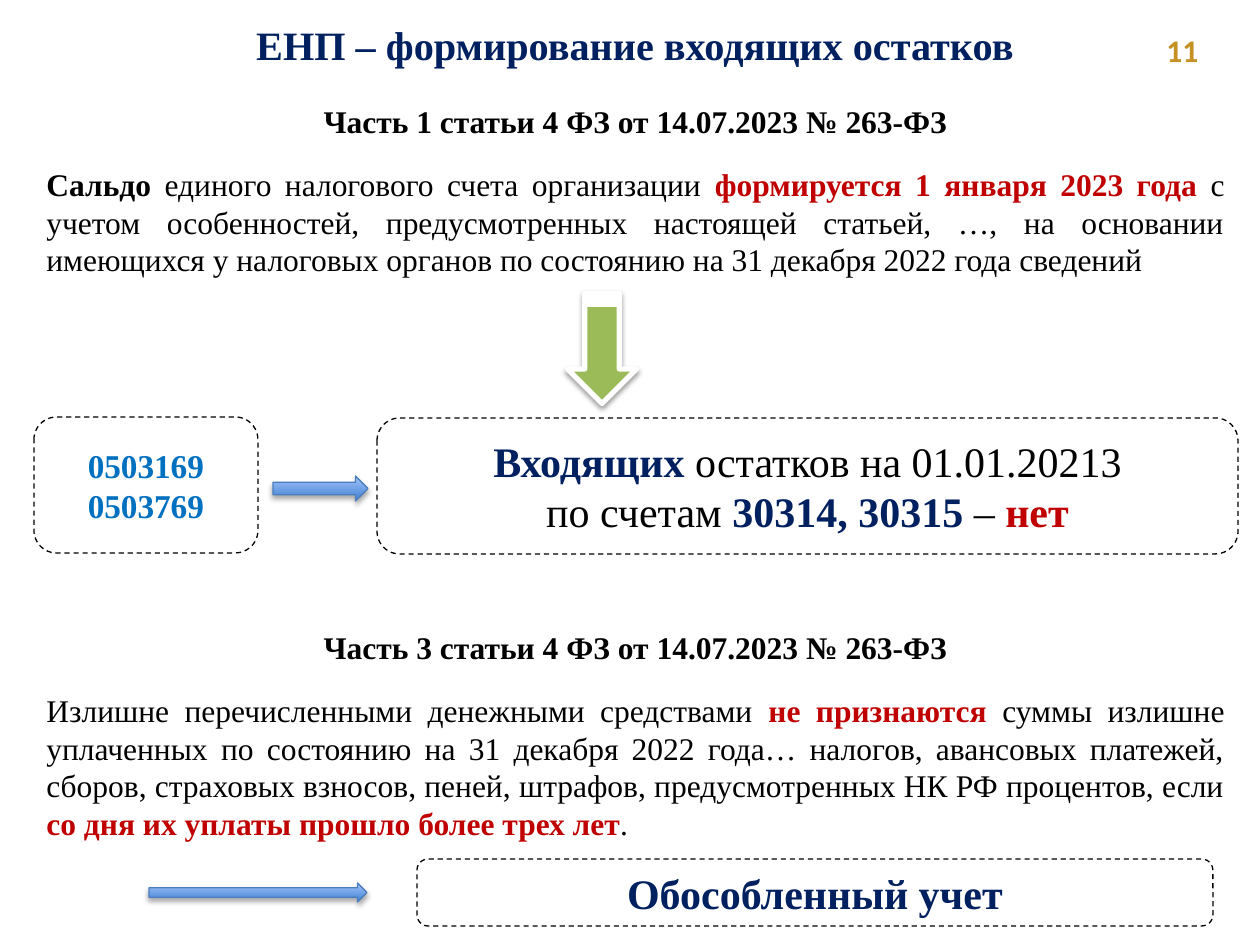
import dataclasses
from typing import Optional

import lxml.etree
import pptx
import pptx.dml.color
import pptx.enum.dml
import pptx.enum.shapes
import pptx.enum.text
import pptx.oxml.ns
import pptx.util

EMU_PER_PX = 914400 / 126
ALIGN = pptx.enum.text.PP_ALIGN
ANCHOR = pptx.enum.text.MSO_ANCHOR
SHAPE = pptx.enum.shapes.MSO_SHAPE


@dataclasses.dataclass(frozen=True)
class Theme:
    serif: str = "Times New Roman"
    sans: str = "Calibri"
    black: str = "000000"
    white: str = "FFFFFF"
    navy: str = "002060"
    red: str = "C00000"
    blue: str = "0070C0"
    gold: str = "C79023"
    green: str = "9BBB59"
    arrow_dark: str = "3F80CE"
    arrow_light: str = "A4C4FF"
    arrow_line: str = "4B7EBC"
    body_size: int = 18
    form_size: int = 19
    title_size: int = 23
    result_size: int = 24
    heading_gap: float = 14.4


THEME = Theme()


@dataclasses.dataclass(frozen=True)
class Box:
    left: int
    top: int
    width: int
    height: int

    def emu(self) -> list[int]:
        return [round(value * EMU_PER_PX) for value in dataclasses.astuple(self)]


@dataclasses.dataclass(frozen=True)
class Run:
    text: str
    color: str = THEME.black
    bold: bool = True


@dataclasses.dataclass(frozen=True)
class Line:
    runs: list[Run]
    align: Optional[int] = ALIGN.CENTER
    gap_after: float = 0


@dataclasses.dataclass(frozen=True)
class Article:
    box: Box
    heading: str
    runs: list[Run]


@dataclasses.dataclass(frozen=True)
class Frame:
    box: Box
    size: int
    lines: list[Line]


def plain(text: str) -> Run:
    return Run(text, bold=False)


def rgb(color: str) -> pptx.dml.color.RGBColor:
    return pptx.dml.color.RGBColor.from_string(color)


def write_lines(shape, lines: list[Line], size: int, font: str = THEME.serif,
                anchor=ANCHOR.MIDDLE) -> None:
    text_frame = shape.text_frame
    text_frame.word_wrap = True
    text_frame.vertical_anchor = anchor
    text_frame.text = "\n".join("" for _ in lines)
    for paragraph, line in zip(text_frame.paragraphs, lines):
        paragraph.alignment = line.align
        paragraph.space_after = pptx.util.Pt(line.gap_after)
        for item in line.runs:
            run = paragraph.add_run()
            run.text = item.text
            run.font.name = font
            run.font.size = pptx.util.Pt(size)
            run.font.bold = item.bold
            run.font.color.rgb = rgb(item.color)


def add_shadow(shape, opacity: int, blur: float, distance: float) -> None:
    qn = pptx.oxml.ns.qn
    shape.shadow.inherit = False
    effects = shape._element.spPr.find(qn("a:effectLst"))
    shadow = lxml.etree.SubElement(
        effects, qn("a:outerShdw"), blurRad=str(pptx.util.Pt(blur)),
        dist=str(pptx.util.Pt(distance)), dir="5400000", rotWithShape="0")
    color = lxml.etree.SubElement(shadow, qn("a:srgbClr"), val=THEME.black)
    lxml.etree.SubElement(color, qn("a:alpha"), val=str(opacity * 1000))


def add_text(slide, box: Box, lines: list[Line], size: int, font: str = THEME.serif,
             anchor=ANCHOR.TOP):
    shape = slide.shapes.add_textbox(*box.emu())
    write_lines(shape, lines, size, font, anchor)
    return shape


def add_article(slide, article: Article) -> None:
    lines = [Line([Run(article.heading)], gap_after=THEME.heading_gap),
             Line(article.runs, ALIGN.JUSTIFY)]
    add_text(slide, article.box, lines, THEME.body_size, anchor=ANCHOR.MIDDLE)


def add_frame(slide, frame: Frame) -> None:
    shape = slide.shapes.add_shape(SHAPE.ROUNDED_RECTANGLE, *frame.box.emu())
    shape.shadow.inherit = False
    shape.fill.background()
    shape.line.color.rgb = rgb(THEME.black)
    shape.line.width = pptx.util.Pt(0.75)
    shape.line.dash_style = pptx.enum.dml.MSO_LINE.DASH
    write_lines(shape, frame.lines, frame.size)


def add_right_arrow(slide, box: Box) -> None:
    shape = slide.shapes.add_shape(SHAPE.RIGHT_ARROW, *box.emu())
    shape.fill.gradient()
    shape.fill.gradient_angle = 90
    for stop, color in zip(shape.fill.gradient_stops, (THEME.arrow_dark, THEME.arrow_light)):
        stop.color.rgb = rgb(color)
    shape.line.color.rgb = rgb(THEME.arrow_line)
    shape.line.width = pptx.util.Pt(0.75)
    add_shadow(shape, 35, 3.1, 1.8)


def add_down_arrow(slide, box: Box) -> None:
    shape = slide.shapes.add_shape(SHAPE.STRIPED_RIGHT_ARROW, *box.emu())
    shape.rotation = 90
    shape.fill.solid()
    shape.fill.fore_color.rgb = rgb(THEME.green)
    shape.line.color.rgb = rgb(THEME.white)
    shape.line.width = pptx.util.Pt(3)
    add_shadow(shape, 38, 3.1, 1.6)


ARTICLES = [
    Article(Box(34, 86, 1203, 208), "Часть 1 статьи 4 ФЗ от 14.07.2023 № 263-ФЗ", [
        Run("Сальдо"), plain(" единого налогового счета организации "),
        Run("формируется 1 января 2023 года ", THEME.red),
        plain("с учетом особенностей, предусмотренных настоящей статьей, …, на основании "
              "имеющихся у налоговых органов по состоянию на 31 декабря 2022 года сведений")]),
    Article(Box(34, 621, 1203, 228), "Часть 3 статьи 4 ФЗ от 14.07.2023 № 263-ФЗ", [
        plain("Излишне перечисленными денежными средствами "),
        Run("не признаются ", THEME.red),
        plain("суммы излишне уплаченных по состоянию на 31 декабря 2022 года… налогов, "
              "авансовых платежей, сборов, страховых взносов, пеней, штрафов, "
              "предусмотренных НК РФ процентов, если "),
        Run("со дня их уплаты прошло более трех лет", THEME.red), plain(".")]),
]

FRAMES = [
    Frame(Box(34, 417, 224, 136), THEME.form_size,
          [Line([Run(form, THEME.blue)]) for form in ("0503169", "0503769")]),
    Frame(Box(377, 418, 861, 136), THEME.result_size, [
        Line([Run("Входящих", THEME.navy), plain(" остатков на 01.01.20213")]),
        Line([plain("по счетам "), Run("30314, 30315 ", THEME.navy),
              plain("– "), Run("нет", THEME.red)])]),
    Frame(Box(417, 859, 796, 67), THEME.result_size,
          [Line([Run("Обособленный учет", THEME.navy)])]),
]

RIGHT_ARROWS = [Box(273, 476, 95, 25), Box(149, 883, 218, 19)]


def main() -> None:
    presentation = pptx.Presentation()
    presentation.slide_width = pptx.util.Inches(10)
    presentation.slide_height = pptx.util.Inches(7.5)
    slide = presentation.slides.add_slide(presentation.slide_layouts[6])

    # Page number and title
    add_text(slide, Box(1147, 25, 91, 50), [Line([Run(" 11", THEME.gold)], ALIGN.LEFT)],
             THEME.body_size, THEME.sans)
    title = add_text(slide, Box(214, 14, 843, 62),
                     [Line([Run("ЕНП – формирование входящих остатков", THEME.navy)])],
                     THEME.title_size)
    title.text_frame.auto_size = pptx.enum.text.MSO_AUTO_SIZE.SHAPE_TO_FIT_TEXT

    # Quoted articles of the law
    for article in ARTICLES:
        add_article(slide, article)

    # Arrows and dashed frames
    add_down_arrow(slide, Box(547, 314, 110, 69))
    for box in RIGHT_ARROWS:
        add_right_arrow(slide, box)
    for frame in FRAMES:
        add_frame(slide, frame)

    presentation.save("out.pptx")


if __name__ == "__main__":
    main()
